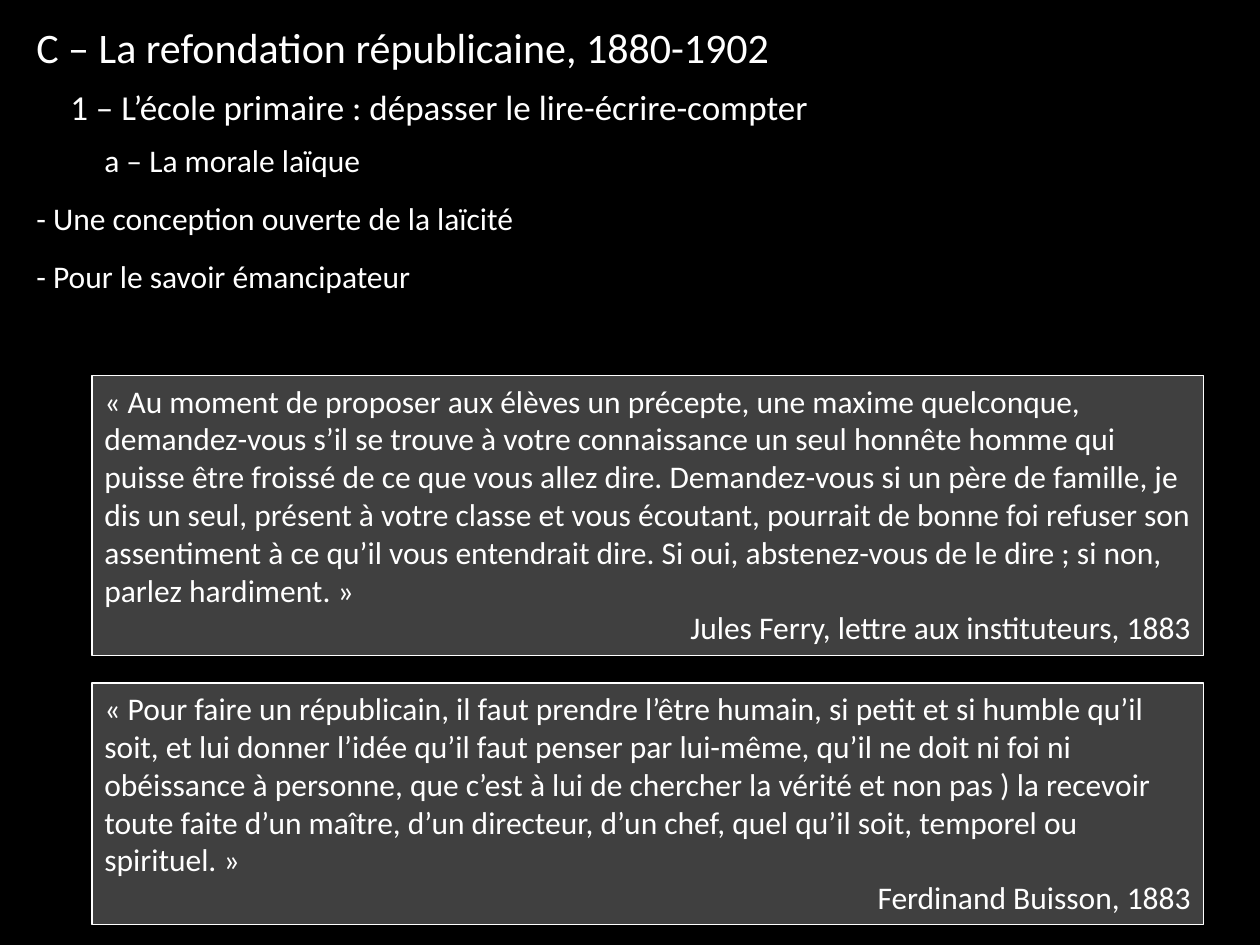
from pptx import Presentation
from pptx.dml.color import RGBColor as RGB
from pptx.enum.shapes import MSO_SHAPE as Shape
from pptx.enum.text import MSO_ANCHOR as Anchor, MSO_AUTO_SIZE as Auto, PP_ALIGN as Align
from pptx.util import Inches, Pt

COLORS = {"back": "000000", "text": "FFFFFF", "panel": "404040", "edge": "FFFFFF"}
FONT = "Calibri"
WIDTH = 8.36

HEADS = [
    ("C – La refondation républicaine, 1880-1902", 0.19, 0.12, 0.5, 24),
    ("1 – L’école primaire : dépasser le lire-écrire-compter", 0.46, 0.63, 0.44, 20),
    ("a – La morale laïque", 0.73, 1.07, 0.4, 18),
    ("- Une conception ouverte de la laïcité", 0.19, 1.53, 0.4, 18),
    ("- Pour le savoir émancipateur", 0.19, 1.99, 0.4, 18),
]

QUOTES = [
    (
        "« Au moment de proposer aux élèves un précepte, une maxime quelconque, "
        "demandez-vous s’il se trouve à votre connaissance un seul honnête homme qui "
        "puisse être froissé de ce que vous allez dire. Demandez-vous si un père de "
        "famille, je dis un seul, présent à votre classe et vous écoutant, pourrait de "
        "bonne foi refuser son assentiment à ce qu’il vous entendrait dire. Si oui, "
        "abstenez-vous de le dire ; si non, parlez hardiment. »",
        "Jules Ferry, lettre aux instituteurs, 1883",
        2.98,
        2.22,
    ),
    (
        "« Pour faire un républicain, il faut prendre l’être humain, si petit et si "
        "humble qu’il soit, et lui donner l’idée qu’il faut penser par lui-même, qu’il "
        "ne doit ni foi ni obéissance à personne, que c’est à lui de chercher la vérité "
        "et non pas ) la recevoir toute faite d’un maître, d’un directeur, d’un chef, "
        "quel qu’il soit, temporel ou spirituel. »",
        "Ferdinand Buisson, 1883",
        5.42,
        1.92,
    ),
]


def color(name):
    return RGB.from_string(COLORS[name])


def set_text(shape, text, size):
    frame = shape.text_frame
    frame.word_wrap = True
    frame.auto_size = Auto.SHAPE_TO_FIT_TEXT
    frame.vertical_anchor = Anchor.TOP
    frame.text = text
    for para in frame.paragraphs:
        para.alignment = Align.LEFT
        for run in para.runs:
            run.font.name = FONT
            run.font.size = Pt(size)
            run.font.color.rgb = color("text")
    return frame


def add_head(slide, text, left, top, height, size):
    box = slide.shapes.add_textbox(Inches(left), Inches(top), Inches(WIDTH), Inches(height))
    set_text(box, text, size)


def add_quote(slide, quote, author, top, height):
    panel = slide.shapes.add_shape(
        Shape.RECTANGLE, Inches(0.73), Inches(top), Inches(8.82), Inches(height)
    )
    panel.shadow.inherit = False
    panel.fill.solid()
    panel.fill.fore_color.rgb = color("panel")
    panel.line.color.rgb = color("edge")
    panel.line.width = Pt(0.75)
    frame = set_text(panel, f"{quote}\n{author}", 18)
    frame.paragraphs[-1].alignment = Align.RIGHT


def main():
    deck = Presentation()
    deck.slide_width, deck.slide_height = Inches(10), Inches(7.5)
    slide = deck.slides.add_slide(deck.slide_layouts[6])
    fill = slide.background.fill
    fill.solid()
    fill.fore_color.rgb = color("back")
    for head in HEADS:
        add_head(slide, *head)
    for quote in QUOTES:
        add_quote(slide, *quote)
    deck.save("out.pptx")


if __name__ == "__main__":
    main()
